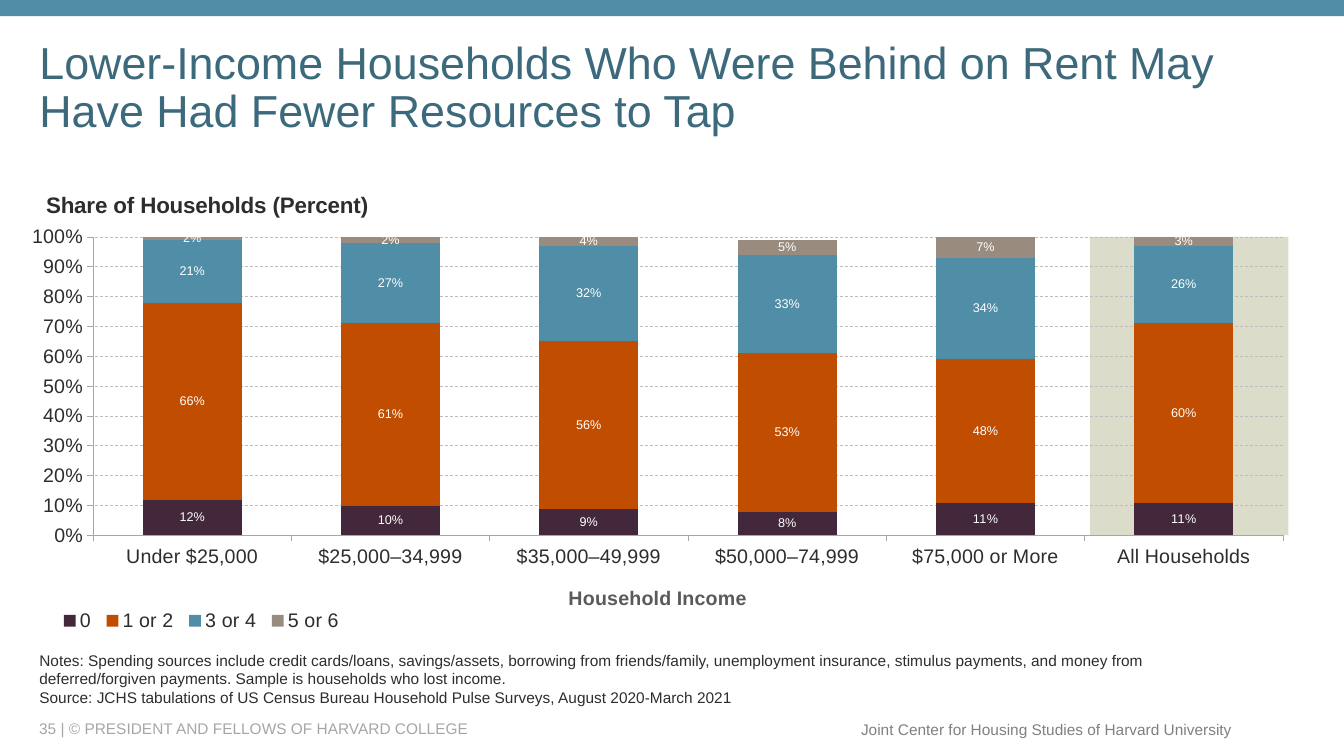
import pptx
import pptx.chart.data
import pptx.dml.color
import pptx.enum.chart
import pptx.enum.dml
import pptx.enum.shapes
import pptx.enum.text
import pptx.oxml
import pptx.oxml.ns
import pptx.util

Inches = pptx.util.Inches
Pt = pptx.util.Pt
RGBColor = pptx.dml.color.RGBColor
Align = pptx.enum.text.PP_ALIGN
Anchor = pptx.enum.text.MSO_ANCHOR
qn = pptx.oxml.ns.qn

TEAL = RGBColor(0x50, 0x8D, 0xA6)
DEEP_TEAL = RGBColor(0x3C, 0x6A, 0x7C)
PLUM = RGBColor(0x43, 0x27, 0x3A)
RUST = RGBColor(0xC1, 0x4D, 0x00)
TAUPE = RGBColor(0x99, 0x8B, 0x7D)
SAGE = RGBColor(0xDB, 0xDD, 0xCA)
INK = RGBColor(0x2D, 0x2D, 0x2D)
SLATE = RGBColor(0x5A, 0x5A, 0x5A)
GRAY = RGBColor(0x80, 0x80, 0x80)
LIGHT_GRAY = RGBColor(0xA6, 0xA6, 0xA6)
GRID_GRAY = RGBColor(0xBD, 0xBD, 0xBD)
WHITE = RGBColor(0xFF, 0xFF, 0xFF)

INCOMES = ["Under $25,000", "$25,000–34,999", "$35,000–49,999",
           "$50,000–74,999", "$75,000 or More", "All Households"]
SOURCES_USED = [
    ("0", PLUM, (0.12, 0.10, 0.09, 0.08, 0.11, 0.11)),
    ("1 or 2", RUST, (0.66, 0.61, 0.56, 0.53, 0.48, 0.60)),
    ("3 or 4", TEAL, (0.21, 0.27, 0.32, 0.33, 0.34, 0.26)),
    ("5 or 6", TAUPE, (0.02, 0.02, 0.04, 0.05, 0.07, 0.03)),
]


def style_font(font, size, color, bold=False):
    font.name = "Arial"
    font.size = Pt(size)
    font.bold = bold
    font.color.rgb = color


def write(frame, text, size=11, color=INK, bold=False, align=Align.LEFT, spacing=1.0):
    for index, line in enumerate(text.split("\n")):
        paragraph = frame.add_paragraph() if index else frame.paragraphs[0]
        paragraph.alignment = align
        paragraph.line_spacing = spacing
        paragraph.space_before = Pt(0)
        run = paragraph.add_run()
        run.text = line
        style_font(run.font, size, color, bold)


def place(element, after, inner=False, **fractions):
    for layout in element.findall(qn("c:layout")):
        element.remove(layout)
    layout = pptx.oxml.parse_xml(
        '<c:layout xmlns:c="http://schemas.openxmlformats.org/drawingml/2006/chart">'
        "<c:manualLayout/></c:layout>")
    settings = [("layoutTarget", "inner")] if inner else []
    settings += [("xMode", "edge"), ("yMode", "edge")]
    settings += list(fractions.items())
    for name, value in settings:
        layout[0].append(layout.makeelement(qn("c:" + name), {"val": str(value)}))
    previous = element.find(qn(after)) if after else None
    element.insert(0 if previous is None else element.index(previous) + 1, layout)


class SlideBuilder:
    def __init__(self, presentation):
        self.slide = presentation.slides.add_slide(presentation.slide_layouts[1])

    def box(self, left, top, width, height):
        return [Inches(value) for value in (left, top, width, height)]

    def placeholder(self, shape, area, text, anchor, **style):
        shape.left, shape.top, shape.width, shape.height = self.box(*area)
        frame = shape.text_frame
        frame.auto_size = pptx.enum.text.MSO_AUTO_SIZE.NONE
        frame.word_wrap = True
        frame.vertical_anchor = anchor
        write(frame, text, **style)
        return frame

    def title(self, area, text, **style):
        self.placeholder(self.slide.shapes.title, area, text, Anchor.MIDDLE, **style)

    def notes(self, area, text, **style):
        frame = self.placeholder(self.slide.placeholders[1], area, text, Anchor.BOTTOM, **style)
        for paragraph in frame.paragraphs:
            properties = paragraph._p.get_or_add_pPr()
            properties.set("marL", "0")
            properties.set("indent", "0")
            properties.append(properties.makeelement(qn("a:buNone"), {}))

    def text(self, area, text, wrap=True, **style):
        frame = self.slide.shapes.add_textbox(*self.box(*area)).text_frame
        frame.word_wrap = wrap
        frame.vertical_anchor = Anchor.MIDDLE
        write(frame, text, **style)

    def rectangle(self, area, color):
        shape = self.slide.shapes.add_shape(
            pptx.enum.shapes.MSO_SHAPE.RECTANGLE, *self.box(*area))
        shape.shadow.inherit = False
        shape.fill.solid()
        shape.fill.fore_color.rgb = color
        shape.line.fill.background()

    def style_axis(self, axis):
        axis.major_tick_mark = pptx.enum.chart.XL_TICK_MARK.OUTSIDE
        axis.minor_tick_mark = pptx.enum.chart.XL_TICK_MARK.NONE
        style_font(axis.tick_labels.font, 14, INK)
        axis.format.line.color.rgb = LIGHT_GRAY
        axis.format.line.width = Pt(0.5)

    def stacked_chart(self, area, heading, axis_heading):
        data = pptx.chart.data.CategoryChartData(number_format="0%")
        data.categories = INCOMES
        for name, _, values in SOURCES_USED:
            data.add_series(name, values)
        chart = self.slide.shapes.add_chart(
            pptx.enum.chart.XL_CHART_TYPE.COLUMN_STACKED, *self.box(*area), data).chart
        style_font(chart.font, 10, SLATE)

        chart.has_title = True
        write(chart.chart_title.text_frame, heading, size=16, bold=True)
        place(chart.chart_title._element, "c:tx", x=0.01, y=0.03)

        plot = chart.plots[0]
        plot.gap_width = 100
        plot.overlap = 100
        plot.vary_by_categories = False
        for series, (_, color, _) in zip(plot.series, SOURCES_USED):
            series.format.fill.solid()
            series.format.fill.fore_color.rgb = color
            labels = series.data_labels
            labels.show_value = True
            labels.position = pptx.enum.chart.XL_LABEL_POSITION.CENTER
            labels.number_format = "0%"
            labels.number_format_is_linked = False
            style_font(labels.font, 9, WHITE)
        place(chart._chartSpace.chart.plotArea, None, inner=True,
              x=0.05, y=0.137, w=0.933, h=0.644)

        categories = chart.category_axis
        self.style_axis(categories)
        categories.has_major_gridlines = False
        write(categories.axis_title.text_frame, axis_heading, size=14, color=SLATE, bold=True)
        place(categories.axis_title._element, "c:tx", x=0.42, y=0.88)

        shares = chart.value_axis
        self.style_axis(shares)
        shares.minimum_scale = 0
        shares.maximum_scale = 1
        shares.major_unit = 0.1
        shares.tick_labels.number_format = "0%"
        shares.tick_labels.number_format_is_linked = False
        gridline = shares.major_gridlines.format.line
        gridline.color.rgb = GRID_GRAY
        gridline.width = Pt(0.5)
        gridline.dash_style = pptx.enum.dml.MSO_LINE.DASH

        chart.has_legend = True
        chart.legend.position = pptx.enum.chart.XL_LEGEND_POSITION.BOTTOM
        chart.legend.include_in_layout = False
        style_font(chart.legend.font, 14, INK)
        place(chart.legend._element, "c:legendPos", x=0.02, y=0.93, w=0.23, h=0.07)


def main():
    presentation = pptx.Presentation()
    presentation.slide_width = Inches(13.33)
    presentation.slide_height = Inches(7.5)
    builder = SlideBuilder(presentation)
    builder.text((0.29, 7.13, 7.92, 0.2), "35 | © PRESIDENT AND FELLOWS OF HARVARD COLLEGE",
                 color=LIGHT_GRAY)
    builder.text((8.42, 7.09, 3.9, 0.29), "Joint Center for Housing Studies of Harvard University",
                 wrap=False, color=GRAY, align=Align.RIGHT)
    builder.rectangle((0, 0, 13.33, 0.16), TEAL)
    builder.rectangle((10.81, 2.35, 1.97, 2.96), SAGE)
    builder.stacked_chart((0.29, 1.72, 12.65, 4.6), "Share of Households (Percent)",
                          "Household Income")
    builder.title((0.29, 0.4, 12.65, 0.97),
                  "Lower-Income Households Who Were Behind on Rent May "
                  "Have Had Fewer Resources to Tap",
                  size=32, color=DEEP_TEAL, spacing=0.9)
    builder.notes((0.29, 6.48, 11.75, 0.58),
                  "Notes: Spending sources include credit cards/loans, savings/assets, "
                  "borrowing from friends/family, unemployment insurance, stimulus payments, "
                  "and money from deferred/forgiven payments. "
                  "Sample is households who lost income.\n"
                  "Source: JCHS tabulations of US Census Bureau Household Pulse Surveys, "
                  "August 2020-March 2021")
    presentation.save("out.pptx")


if __name__ == "__main__":
    main()
